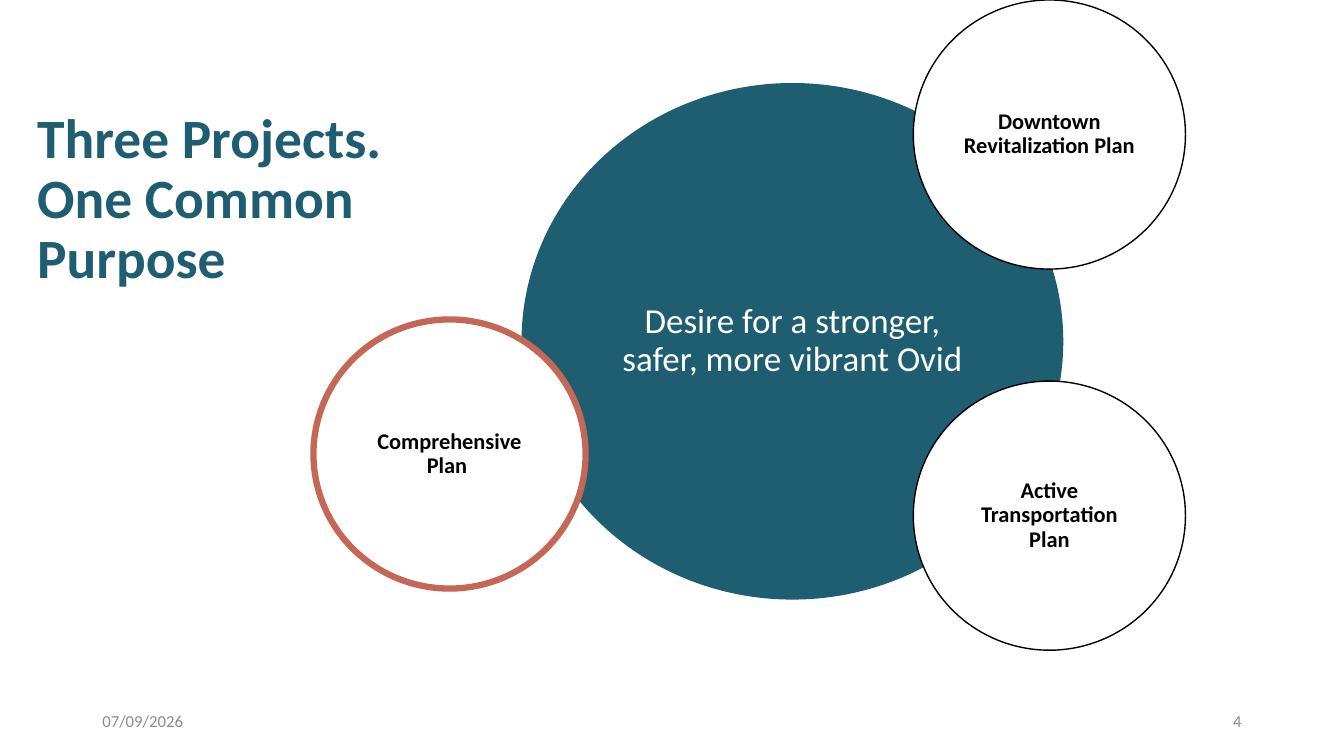
from dataclasses import dataclass

from pptx import Presentation
from pptx.dml.color import RGBColor
from pptx.enum import shapes as sh, text as tx
from pptx.util import Pt

TEAL = RGBColor(0x1E, 0x5E, 0x70)
CORAL = RGBColor(0xC4, 0x67, 0x56)
GRAY = RGBColor(0x8C, 0x8C, 0x8C)
WHITE = RGBColor(0xFF, 0xFF, 0xFF)
BLACK = RGBColor(0x00, 0x00, 0x00)

FONT = "Calibri"
PLAN_WIDTH, PLAN_HEIGHT = 194.4, 192.24
RIGHT_PLANS_LEFT = 652.4


@dataclass(frozen=True)
class Circle:
    label: str
    left: float
    top: float
    width: float = PLAN_WIDTH
    height: float = PLAN_HEIGHT
    fill: RGBColor = WHITE
    outline: RGBColor = BLACK
    outline_width: float = 1
    size: float = 16
    color: RGBColor = BLACK
    bold: bool = True


@dataclass(frozen=True)
class FooterItem:
    label: str
    left: float
    align: tx.PP_ALIGN


CIRCLES = [
    Circle("Desire for a stronger, safer, more vibrant Ovid", 373, 59.8, 386, 368,
           fill=TEAL, outline=TEAL, size=25, color=WHITE, bold=False),
    Circle("Comprehensive Plan ", 223.9, 228.2, outline=CORAL, outline_width=4.5),
    Circle("Active Transportation Plan", RIGHT_PLANS_LEFT, 272.2),
    Circle("Downtown Revitalization Plan", RIGHT_PLANS_LEFT, 0),
]

FOOTER = [
    FooterItem("07/09/2026", 66, tx.PP_ALIGN.LEFT),
    FooterItem("4", 678, tx.PP_ALIGN.RIGHT),
]


def write(frame, label: str, size: float, color: RGBColor, align: tx.PP_ALIGN,
          bold: bool = False, spacing: float = 1.0) -> None:
    frame.word_wrap = True
    frame.auto_size = tx.MSO_AUTO_SIZE.NONE
    frame.vertical_anchor = tx.MSO_ANCHOR.MIDDLE
    paragraph = frame.paragraphs[0]
    paragraph.alignment = align
    paragraph.line_spacing = spacing
    paragraph.space_before = Pt(0)
    run = paragraph.add_run()
    run.text = label
    run.font.name = FONT
    run.font.size = Pt(size)
    run.font.bold = bold
    run.font.color.rgb = color


def draw_circle(slide, circle: Circle) -> None:
    oval = slide.shapes.add_shape(
        sh.MSO_SHAPE.OVAL, Pt(circle.left), Pt(circle.top),
        Pt(circle.width), Pt(circle.height))
    oval.shadow.inherit = False
    oval.fill.solid()
    oval.fill.fore_color.rgb = circle.fill
    oval.line.color.rgb = circle.outline
    oval.line.width = Pt(circle.outline_width)
    frame = oval.text_frame
    frame.margin_left = frame.margin_right = Pt(5)
    frame.margin_top = frame.margin_bottom = Pt(2)
    write(frame, circle.label, circle.size, circle.color,
          tx.PP_ALIGN.CENTER, circle.bold, 0.9)


def draw_footer_item(slide, item: FooterItem) -> None:
    box = slide.shapes.add_textbox(Pt(item.left), Pt(500.5), Pt(216), Pt(28.8))
    write(box.text_frame, item.label, 12, GRAY, item.align)


def place_title(slide) -> None:
    title = slide.shapes.title
    title.left, title.top, title.width, title.height = (
        Pt(19.4), Pt(56.2), Pt(270.7), Pt(174.2))
    write(title.text_frame, "Three Projects. One Common Purpose", 39.6, TEAL,
          tx.PP_ALIGN.LEFT, True, 0.9)


def main() -> None:
    deck = Presentation()
    deck.slide_width, deck.slide_height = Pt(960), Pt(540)
    slide = deck.slides.add_slide(deck.slide_layouts[5])
    place_title(slide)
    for item in FOOTER:
        draw_footer_item(slide, item)
    for circle in CIRCLES:
        draw_circle(slide, circle)
    deck.save("out.pptx")


if __name__ == "__main__":
    main()
